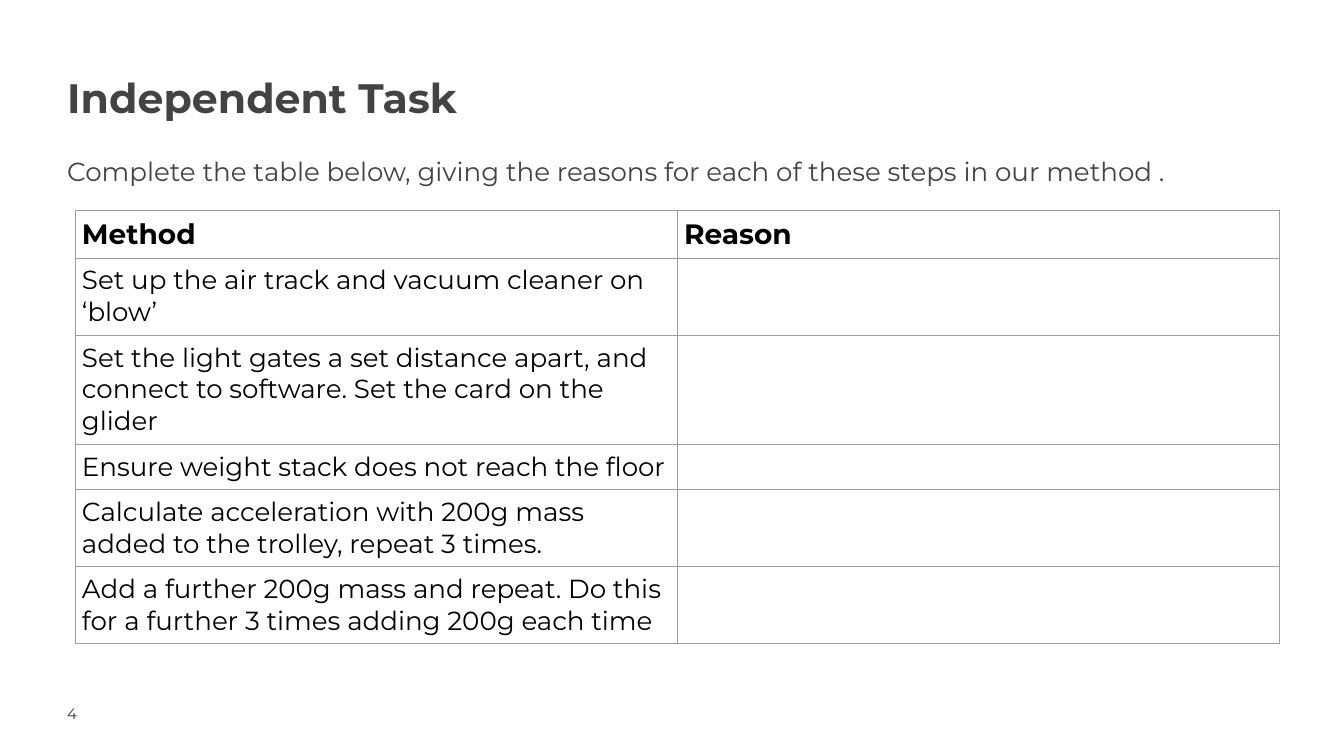
"""Build the Independent Task slide with its method and reason table."""
from lxml import etree
from pptx import Presentation
from pptx.dml.color import RGBColor
from pptx.enum.text import MSO_ANCHOR, MSO_AUTO_SIZE, PP_ALIGN
from pptx.oxml.ns import qn
from pptx.util import Inches, Pt

TOP, LEFT, FIXED = MSO_ANCHOR.TOP, PP_ALIGN.LEFT, MSO_AUTO_SIZE.NONE

THEME = {
    "font": "Montserrat",
    "grey": "434343", "black": "000000", "plum": "4B3241", "rule": "9E9E9E",
    "title": 44, "head": 30, "text": 28, "page": 16,
    "line": 0.75,
}

TITLE = "Independent Task"
TASK = "Complete the table below, giving the reasons for each of these steps in our method ."
PAGE = "4"
HEADS = ["Method", "Reason"]
STEPS = [
    "Set up the air track and vacuum cleaner on ‘blow’",
    "Set the light gates a set distance apart, and connect to software. Set the card on the glider",
    "Ensure weight stack does not reach the floor",
    "Calculate acceleration with 200g mass added to the trolley, repeat 3 times.",
    "Add a further 200g mass and repeat. Do this for a further 3 times adding 200g each time",
]
ROWS = [HEADS] + [[step, ""] for step in STEPS]


def put_text(frame, text, size="text", color="black", bold=False, space=None, after=None):
    para = frame.paragraphs[0]
    para.alignment = LEFT
    if space:
        para.line_spacing = space
    if after:
        para.space_after = Pt(after)
    run = para.add_run()
    run.text = text
    font = run.font
    font.name, font.size, font.bold = THEME["font"], Pt(THEME[size]), bold
    font.color.rgb = RGBColor.from_string(THEME[color])
    return para


def place(shape, left, top, width, height):
    shape.left, shape.top = Inches(left), Inches(top)
    shape.width, shape.height = Inches(width), Inches(height)
    frame = shape.text_frame
    frame.margin_left = frame.margin_right = frame.margin_top = frame.margin_bottom = 0
    frame.word_wrap, frame.auto_size, frame.vertical_anchor = True, FIXED, TOP
    return frame


def add_rules(cell):
    props = cell._tc.get_or_add_tcPr()
    for side in ("lnL", "lnR", "lnT", "lnB"):
        line = etree.SubElement(props, qn(f"a:{side}"), w=str(Pt(THEME["line"])))
        fill = etree.SubElement(line, qn("a:solidFill"))
        etree.SubElement(fill, qn("a:srgbClr"), val=THEME["rule"])


def add_grid(slide, left, top, width, height):
    count, cols = len(ROWS), len(HEADS)
    table = slide.shapes.add_table(
        count, cols, Inches(left), Inches(top),
        Inches(width * cols), Inches(height * count)).table
    table.first_row = table.horz_banding = False
    for r, row in enumerate(ROWS):
        for c, text in enumerate(row):
            cell = table.cell(r, c)
            add_rules(cell)
            cell.fill.background()
            cell.margin_left = cell.margin_right = Inches(0.1)
            cell.margin_top = cell.margin_bottom = Inches(0.1)
            if text:
                put_text(cell.text_frame, text, size="text" if r else "head", bold=r == 0)


def main():
    deck = Presentation()
    deck.slide_width, deck.slide_height = Inches(20), Inches(11.25)
    slide = deck.slides.add_slide(deck.slide_layouts[1])
    title, body = slide.placeholders

    frame = place(body, 1, 2.17, 17.99, 6.91)
    para = put_text(frame, TASK, color="grey", space=1.3, after=20)
    props = para._p.get_or_add_pPr()
    props.set("marL", "0")
    props.set("indent", "0")
    etree.SubElement(props, qn("a:buNone"))

    frame = place(title, 1, 0.97, 14.44, 1.14)
    put_text(frame, TITLE, size="title", color="grey", bold=True, space=1.15)

    frame = place(slide.shapes.add_textbox(0, 0, 0, 0), 1, 10.48, 1.57, 0.39)
    put_text(frame, PAGE, size="page", color="plum")

    add_grid(slide, 1.12, 3.13, 8.96, 0.42)
    deck.save("out.pptx")


if __name__ == "__main__":
    main()
